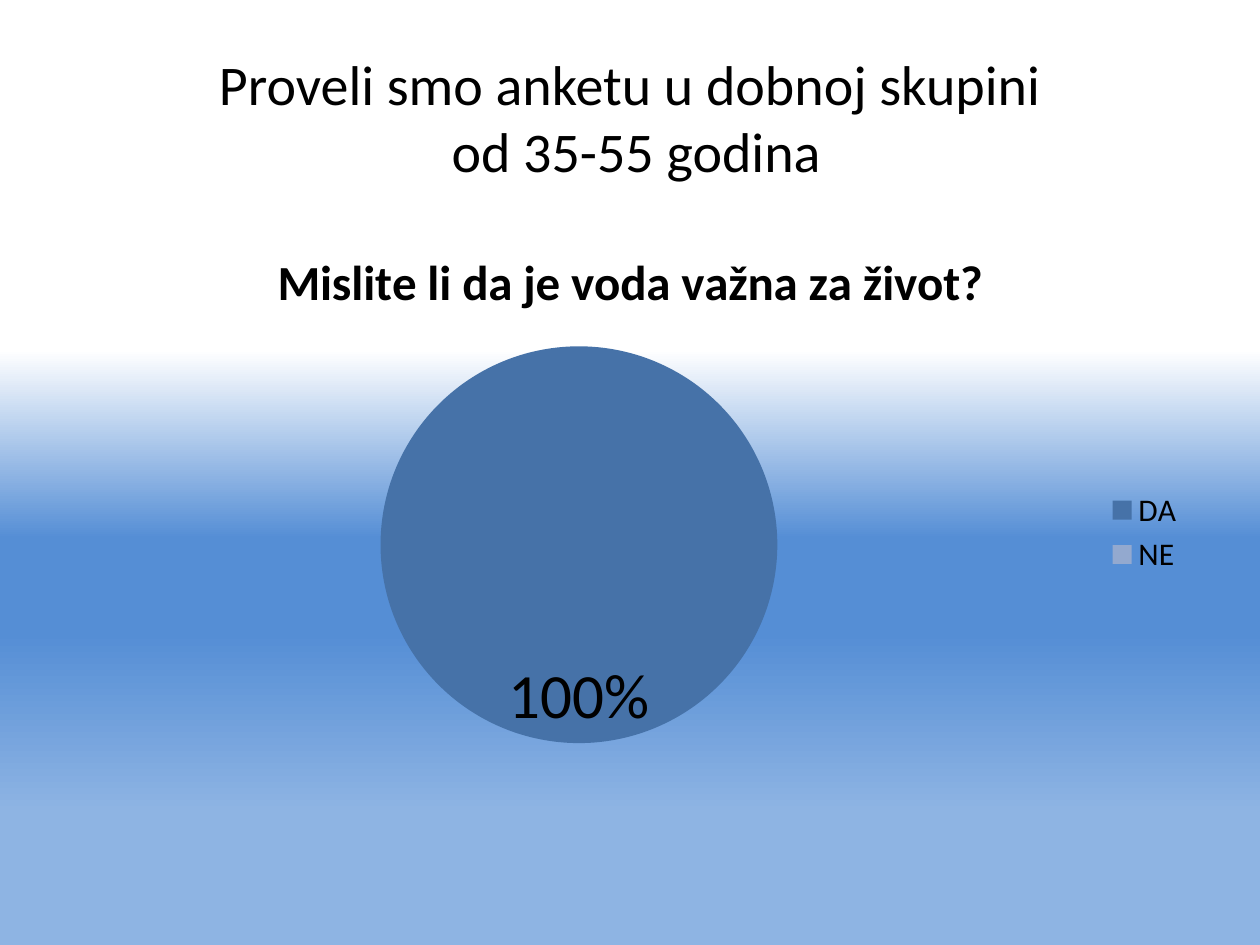
import pptx
import pptx.util
import pptx.chart.data
import pptx.dml.color
import pptx.enum.chart
import pptx.enum.text
import pptx.oxml
import pptx.oxml.ns

Inches, Pt = pptx.util.Inches, pptx.util.Pt
RGB = pptx.dml.color.RGBColor.from_string

TITLE_LINES = ["Proveli smo anketu u dobnoj skupini", " od 35-55 godina"]
QUESTION = "Mislite li da je voda važna za život?"
ANSWERS = [("DA", 100, "4672A8"), ("NE", 0, "93A9CF")]
THEME = {
    "font": "Calibri", "text": "000000",
    "title": 32, "question": 28, "legend": 18, "label": 36,
    "background": [(37, "FFFFFF"), (57, "558ED5"), (67, "558ED5"), (86, "8EB4E3")],
}
PIE_LAYOUT = {"x": 0.28, "y": 0.2, "w": 0.35, "h": 0.64}
NS = pptx.oxml.ns.nsdecls


def style(font, size, bold=False):
    font.name = THEME["font"]
    font.size = Pt(THEME[size])
    font.bold = bold
    font.color.rgb = RGB(THEME["text"])


def paint_background(slide):
    fill = slide.background.fill
    fill.gradient()
    fill.gradient_angle = 270
    stops = slide.element.find(".//" + pptx.oxml.ns.qn("a:gsLst"))
    for stop in list(stops):
        stops.remove(stop)
    for percent, color in THEME["background"]:
        stops.append(pptx.oxml.parse_xml(
            f'<a:gs {NS("a")} pos="{percent * 1000}"><a:srgbClr val="{color}"/></a:gs>'))


def add_title(slide):
    sp = slide.shapes.title
    sp.left, sp.top, sp.width, sp.height = map(Inches, (0.5, 0.3, 9, 1.25))
    tf = sp.text_frame
    tf.vertical_anchor = pptx.enum.text.MSO_ANCHOR.MIDDLE
    p = tf.paragraphs[0]
    p.alignment = pptx.enum.text.PP_ALIGN.CENTER
    for i, line in enumerate(TITLE_LINES):
        if i:
            p.add_line_break()
        r = p.add_run()
        r.text = line
        style(r.font, "title")


def add_pie(slide):
    data = pptx.chart.data.CategoryChartData()
    data.categories = [name for name, _, _ in ANSWERS]
    data.add_series(QUESTION, [value for _, value, _ in ANSWERS])
    chart = slide.shapes.add_chart(
        pptx.enum.chart.XL_CHART_TYPE.PIE,
        *map(Inches, (0.5, 1.75, 9, 4.95)), data).chart
    style(chart.font, "legend")

    chart.has_title = True
    r = chart.chart_title.text_frame.paragraphs[0].add_run()
    r.text = QUESTION
    style(r.font, "question", bold=True)

    chart.has_legend = True
    chart.legend.position = pptx.enum.chart.XL_LEGEND_POSITION.RIGHT
    chart.legend.include_in_layout = False
    style(chart.legend.font, "legend")

    plot = chart.plots[0]
    plot.vary_by_categories = True
    series = plot.series[0]
    for i, (_, _, color) in enumerate(ANSWERS):
        fill = series.points[i].format.fill
        fill.solid()
        fill.fore_color.rgb = RGB(color)

    labels = series.data_labels
    labels.show_percentage = True
    labels.show_value = False
    labels.number_format = "0%"
    labels.number_format_is_linked = False
    labels.position = pptx.enum.chart.XL_LABEL_POSITION.INSIDE_END
    style(labels.font, "label")
    d_lbls = series._element.find(pptx.oxml.ns.qn("c:dLbls"))
    empty = [i for i, (_, value, _) in enumerate(ANSWERS) if value == 0]
    for position, i in enumerate(empty):
        d_lbls.insert(position, pptx.oxml.parse_xml(
            f'<c:dLbl {NS("c")}><c:idx val="{i}"/><c:delete val="1"/></c:dLbl>'))

    area = chart._chartSpace.chart.plotArea
    for layout in area.findall(pptx.oxml.ns.qn("c:layout")):
        area.remove(layout)
    modes = '<c:layoutTarget val="inner"/><c:xMode val="edge"/><c:yMode val="edge"/>'
    sizes = "".join(f'<c:{k} val="{v}"/>' for k, v in PIE_LAYOUT.items())
    area.insert(0, pptx.oxml.parse_xml(
        f'<c:layout {NS("c")}><c:manualLayout>{modes}{sizes}</c:manualLayout></c:layout>'))


def main():
    prs = pptx.Presentation()
    prs.slide_width, prs.slide_height = Inches(10), Inches(7.5)
    slide = prs.slides.add_slide(prs.slide_layouts[5])
    paint_background(slide)
    add_title(slide)
    add_pie(slide)
    prs.save("out.pptx")


if __name__ == "__main__":
    main()
